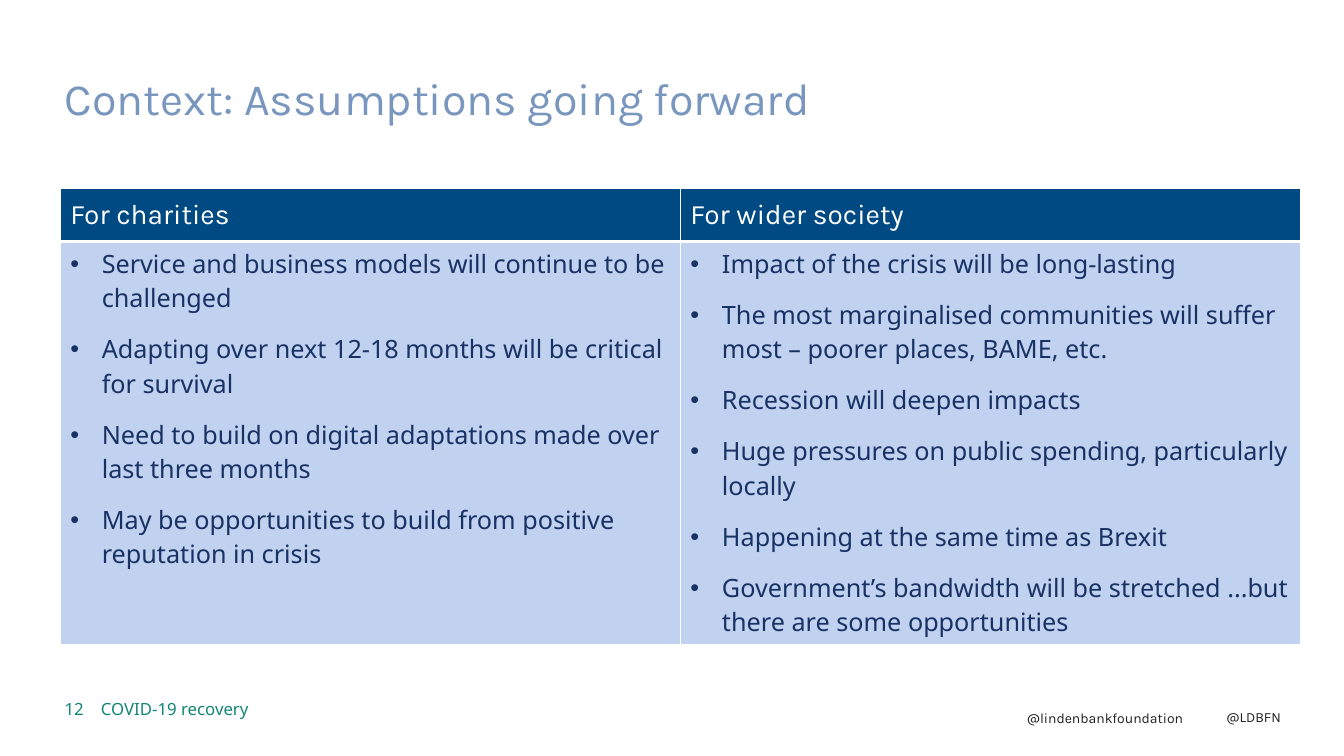
from dataclasses import dataclass

import pptx
import pptx.dml.color
import pptx.enum.text
import pptx.oxml.ns
import pptx.oxml.xmlchemy
import pptx.util
from lxml import etree

Pt = pptx.util.Pt
RGBColor = pptx.dml.color.RGBColor
MSO_ANCHOR = pptx.enum.text.MSO_ANCHOR
PP_ALIGN = pptx.enum.text.PP_ALIGN
qn = pptx.oxml.ns.qn

WHITE = RGBColor(0xFF, 0xFF, 0xFF)
TITLE_BLUE = RGBColor(0x79, 0x96, 0xBE)
HEADER_BLUE = RGBColor(0x00, 0x4A, 0x83)
BODY_BLUE = RGBColor(0xC1, 0xD1, 0xF0)
NAVY = RGBColor(0x18, 0x32, 0x64)
GREEN = RGBColor(0x12, 0x86, 0x76)
BLACK = RGBColor(0x23, 0x20, 0x20)

HEADING_FONT = "Karla"
BODY_FONT = "Noto Sans"
TABLE_LEFT, TABLE_TOP = 43, 134.5
COLUMN_WIDTH, HEADER_HEIGHT, BODY_HEIGHT = 443, 38, 287
BULLET_INDENT = 22.5
FOOTER_TAB = 26


@dataclass(frozen=True)
class TextStyle:
    font: str
    size: float
    color: RGBColor


@dataclass(frozen=True)
class Label:
    text: str
    left: float
    top: float
    width: float
    height: float
    line_spacing: float
    style: TextStyle


@dataclass(frozen=True)
class Column:
    heading: str
    points: tuple[str, ...]


HEADER_STYLE = TextStyle(HEADING_FONT, 20, WHITE)
POINT_STYLE = TextStyle(BODY_FONT, 18, NAVY)
HANDLE_STYLE = TextStyle(HEADING_FONT, 10, BLACK)

TITLE = Label("Context: Assumptions going forward", 39, 51, 598, 52, 0.9,
              TextStyle(HEADING_FONT, 32, TITLE_BLUE))
FOOTER = Label("12\tCOVID-19 recovery", 39, 497.5, 350, 19.5, 0.9,
               TextStyle(BODY_FONT, 12, GREEN))
HANDLES = (
    Label("@lindenbankfoundation", 726.5, 508.3, 129, 14.4, 0.5, HANDLE_STYLE),
    Label("@LDBFN", 869, 507.6, 85, 14.4, 0.5, HANDLE_STYLE),
)
COLUMNS = (
    Column("For charities", (
        "Service and business models will continue to be challenged",
        "Adapting over next 12-18 months will be critical for survival",
        "Need to build on digital adaptations made over last three months",
        "May be opportunities to build from positive reputation in crisis",
    )),
    Column("For wider society", (
        "Impact of the crisis will be long-lasting",
        "The most marginalised communities will suffer most – poorer places, BAME, etc.",
        "Recession will deepen impacts",
        "Huge pressures on public spending, particularly locally",
        "Happening at the same time as Brexit",
        "Government’s bandwidth will be stretched ...but there are some opportunities",
    )),
)


def format_runs(p, style: TextStyle) -> None:
    for r in p.runs:
        r.font.name = style.font
        r.font.size = Pt(style.size)
        r.font.bold = False
        r.font.color.rgb = style.color


def fill_label(sp, label: Label) -> None:
    sp.left, sp.top = Pt(label.left), Pt(label.top)
    sp.width, sp.height = Pt(label.width), Pt(label.height)
    tf = sp.text_frame
    tf.text = label.text
    tf.word_wrap = True
    tf.auto_size = pptx.enum.text.MSO_AUTO_SIZE.NONE
    tf.vertical_anchor = MSO_ANCHOR.TOP
    p = tf.paragraphs[0]
    p.alignment = PP_ALIGN.LEFT
    p.line_spacing = label.line_spacing
    format_runs(p, label.style)


def add_label(s, label: Label):
    sp = s.shapes.add_textbox(0, 0, 0, 0)
    fill_label(sp, label)
    return sp


def add_tab(p, position: float) -> None:
    tabs = etree.SubElement(p._p.get_or_add_pPr(), qn("a:tabLst"))
    etree.SubElement(tabs, qn("a:tab"), pos=str(int(Pt(position))), algn="l")


def add_bullet(p) -> None:
    pPr = p._p.get_or_add_pPr()
    pPr.set("marL", str(int(Pt(BULLET_INDENT))))
    pPr.set("indent", str(-int(Pt(BULLET_INDENT))))
    etree.SubElement(pPr, qn("a:buFont"), typeface="Arial")
    etree.SubElement(pPr, qn("a:buChar"), char="•")


def format_cell(cell, color: RGBColor, top: float, bottom: float) -> None:
    tcPr = cell._tc.get_or_add_tcPr()
    for side, width in (("L", 1), ("R", 1), ("T", top), ("B", bottom)):
        ln = etree.SubElement(tcPr, qn(f"a:ln{side}"), w=str(int(Pt(width))))
        fill = etree.SubElement(ln, qn("a:solidFill"))
        etree.SubElement(fill, qn("a:srgbClr"), val=str(WHITE))
    cell.fill.solid()
    cell.fill.fore_color.rgb = color


def add_assumptions_table(s, columns: tuple[Column, ...]) -> None:
    table = s.shapes.add_table(
        2, len(columns), Pt(TABLE_LEFT), Pt(TABLE_TOP),
        Pt(COLUMN_WIDTH * len(columns)), Pt(HEADER_HEIGHT + BODY_HEIGHT)).table
    table.horz_banding = False
    table.rows[0].height = Pt(HEADER_HEIGHT)
    table.rows[1].height = Pt(BODY_HEIGHT)
    for i, column in enumerate(columns):
        table.columns[i].width = Pt(COLUMN_WIDTH)
        header, body = table.cell(0, i), table.cell(1, i)
        format_cell(header, HEADER_BLUE, 1, 3)
        header.vertical_anchor = MSO_ANCHOR.MIDDLE
        header.text_frame.text = column.heading
        format_runs(header.text_frame.paragraphs[0], HEADER_STYLE)
        format_cell(body, BODY_BLUE, 3, 1)
        body.text_frame.text = "\n".join(column.points)
        for p in body.text_frame.paragraphs:
            add_bullet(p)
            p.space_after = Pt(12)
            format_runs(p, POINT_STYLE)


def main() -> None:
    prs = pptx.Presentation()
    prs.slide_width, prs.slide_height = Pt(960), Pt(540)
    s = prs.slides.add_slide(prs.slide_layouts[5])
    fill_label(s.shapes.title, TITLE)
    for handle in HANDLES:
        add_label(s, handle)
    footer = add_label(s, FOOTER)
    add_tab(footer.text_frame.paragraphs[0], FOOTER_TAB)
    add_assumptions_table(s, COLUMNS)
    prs.save("out.pptx")


if __name__ == "__main__":
    main()
